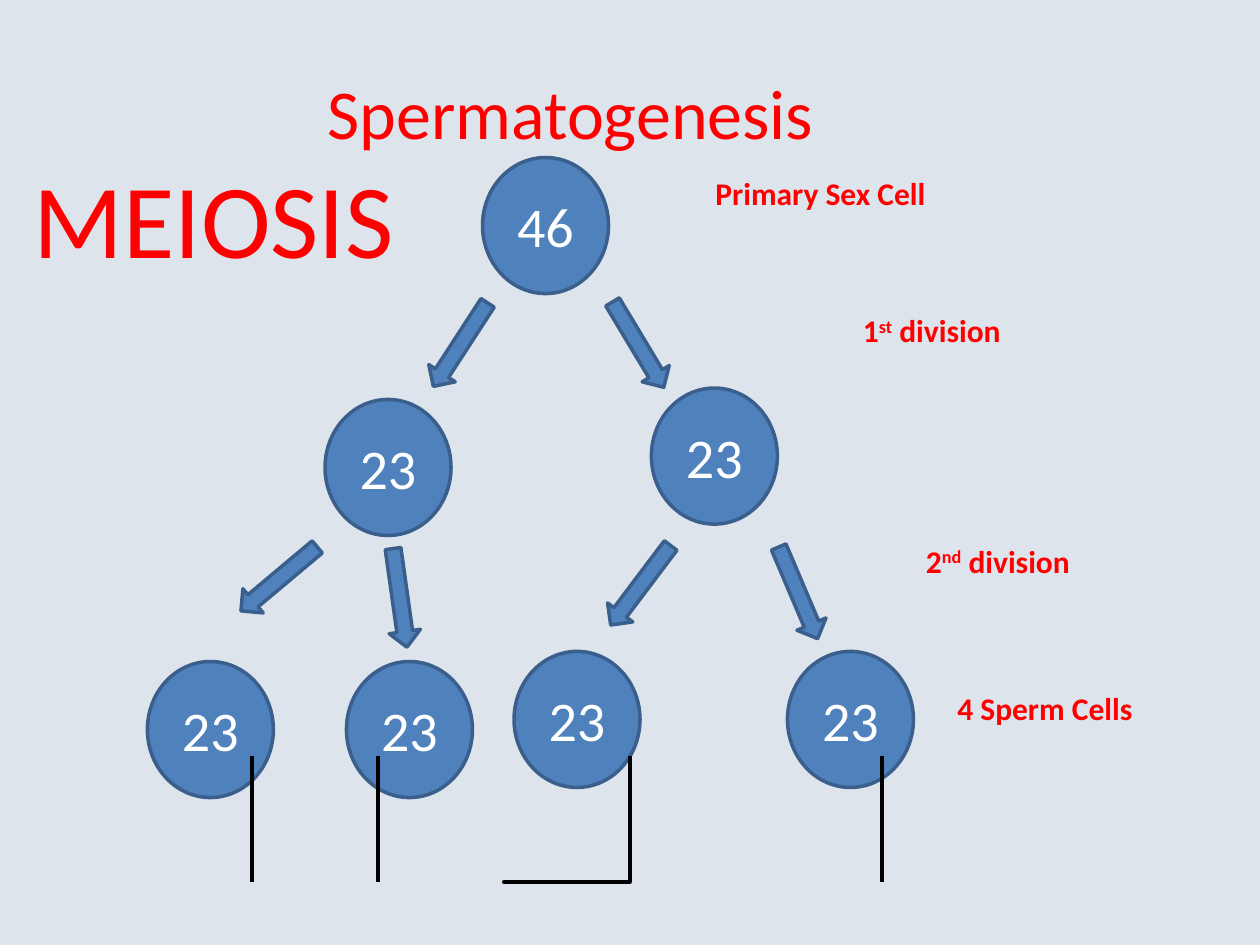
from pptx import Presentation, util as u
from pptx.dml.color import RGBColor
from pptx.enum import shapes, text

WIDTH, HEIGHT = 10, 7.5
FONT = "Calibri"
PAPER, RED, BLUE, EDGE, WHITE, BLACK = "DDE4EB", "FF0000", "4F81BD", "3A5F8C", "FFFFFF", "000000"

TITLE = ("Spermatogenesis", (2.5, 0.5, 4.1, 0.77), 40)
PROCESS = ("MEIOSIS", (0.17, 1.17, 3.08, 1.11), 60)

# Each generation: chromosome count, then the left and top of its cells
CELL_W, CELL_H = 1, 1.08
GENERATIONS = [
    ("46", [(3.83, 1.25)]),
    ("23", [(2.58, 3.17), (5.17, 3.08)]),
    ("23", [(1.17, 5.25), (2.75, 5.25), (4.08, 5.17), (6.25, 5.17)]),
]

# Left, top and clockwise rotation of each division arrow
ARROW_W, ARROW_H = 0.25, 0.79
DIVISIONS = [
    (3.53, 2.34, 33), (4.94, 2.34, 329),
    (2.09, 4.2, 50), (3.05, 4.35, 352),
    (4.96, 4.25, 37), (6.21, 4.31, 337),
]

# Stage labels: place, then runs of (wording, is superscript)
STAGES = [
    ((5.58, 1.33, 1.88, 0.4), [("Primary Sex Cell", False)]),
    ((6.75, 2.42, 1.32, 0.4), [("1", False), ("st", True), (" division", False)]),
    ((7.25, 4.25, 1.38, 0.4), [("2", False), ("nd", True), (" division", False)]),
    ((7.5, 5.42, 1.6, 0.4), [("4 Sperm Cells", False)]),
]

# Outline of a tail, measured from the top left of its box
TAIL_LEFT = 0.41
TAIL = [
    (0.04, 0), (0.08, 0.03), (0.11, 0.07), (0.13, 0.11), (0.15, 0.12), (0.17, 0.17),
    (0.16, 0.21), (0.14, 0.25), (0.11, 0.26), (0.08, 0.29), (0.04, 0.31), (0, 0.34),
    (0.01, 0.46), (0.02, 0.48), (0.05, 0.49), (0.08, 0.52), (0.11, 0.53), (0.14, 0.56),
    (0.16, 0.6), (0.16, 0.66), (0.14, 0.7), (0.09, 0.73), (0.05, 0.76), (0.02, 0.8),
    (0.01, 0.84), (0.02, 0.89), (0.05, 0.92), (0.08, 0.93), (0.1, 0.97), (0.11, 1),
]


def color(value):
    return RGBColor.from_string(value)


def place(shape, box):
    shape.left, shape.top, shape.width, shape.height = map(u.Inches, box)


def write(frame, runs, size, ink, bold=False, align=text.PP_ALIGN.LEFT):
    paragraph = frame.paragraphs[0]
    paragraph.alignment = align
    for wording, raised in runs:
        run = paragraph.add_run()
        run.text = wording
        font = run.font
        font.name, font.size, font.bold = FONT, u.Pt(size), bold
        font.color.rgb = color(ink)
        if raised:
            run._r.get_or_add_rPr().set("baseline", "30000")


def add_label(slide, box, runs, size, bold=False, wrap=False):
    label = slide.shapes.add_textbox(*map(u.Inches, box))
    label.text_frame.word_wrap = wrap
    write(label.text_frame, runs, size, RED, bold)


def add_blue(slide, kind, box):
    shape = slide.shapes.add_shape(kind, *map(u.Inches, box))
    shape.shadow.inherit = False
    shape.fill.solid()
    shape.fill.fore_color.rgb = color(BLUE)
    shape.line.color.rgb = color(EDGE)
    shape.line.width = u.Pt(2)
    return shape


def add_cell(slide, left, top, count):
    cell = add_blue(slide, shapes.MSO_SHAPE.FLOWCHART_CONNECTOR, (left, top, CELL_W, CELL_H))
    cell.text_frame.vertical_anchor = text.MSO_ANCHOR.MIDDLE
    write(cell.text_frame, [(count, False)], 32, WHITE, align=text.PP_ALIGN.CENTER)


def add_tail(slide, left, top):
    points = [(left + x, top + y) for x, y in TAIL]
    builder = slide.shapes.build_freeform(*points[0], scale=u.Inches(1))
    builder.add_line_segments(points[1:], close=False)
    tail = builder.convert_to_shape()
    tail.shadow.inherit = False
    tail.fill.background()
    tail.line.color.rgb = color(BLACK)
    tail.line.width = u.Pt(2.25)


def set_title(slide, wording, box, size):
    title = slide.shapes.title
    place(title, box)
    frame = title.text_frame
    frame.word_wrap = False
    frame.auto_size = text.MSO_AUTO_SIZE.NONE
    frame.vertical_anchor = text.MSO_ANCHOR.TOP
    write(frame, [(wording, False)], size, RED)


def main():
    deck = Presentation()
    deck.slide_width, deck.slide_height = u.Inches(WIDTH), u.Inches(HEIGHT)
    slide = deck.slides.add_slide(deck.slide_layouts.get_by_name("Title Only"))
    slide.background.fill.solid()
    slide.background.fill.fore_color.rgb = color(PAPER)

    set_title(slide, *TITLE)
    for left, top, rotation in DIVISIONS:
        arrow = add_blue(slide, shapes.MSO_SHAPE.DOWN_ARROW, (left, top, ARROW_W, ARROW_H))
        arrow.rotation = rotation
    for count, cells in GENERATIONS:
        for left, top in cells:
            add_cell(slide, left, top, count)
    sperm_cells = GENERATIONS[-1][1]
    for left, top in sperm_cells:
        add_tail(slide, left + TAIL_LEFT, top + CELL_H)
    for box, runs in STAGES:
        add_label(slide, box, runs, 18, bold=True)
    wording, box, size = PROCESS
    add_label(slide, box, [(wording, False)], size, wrap=True)

    deck.save("out.pptx")


if __name__ == "__main__":
    main()
